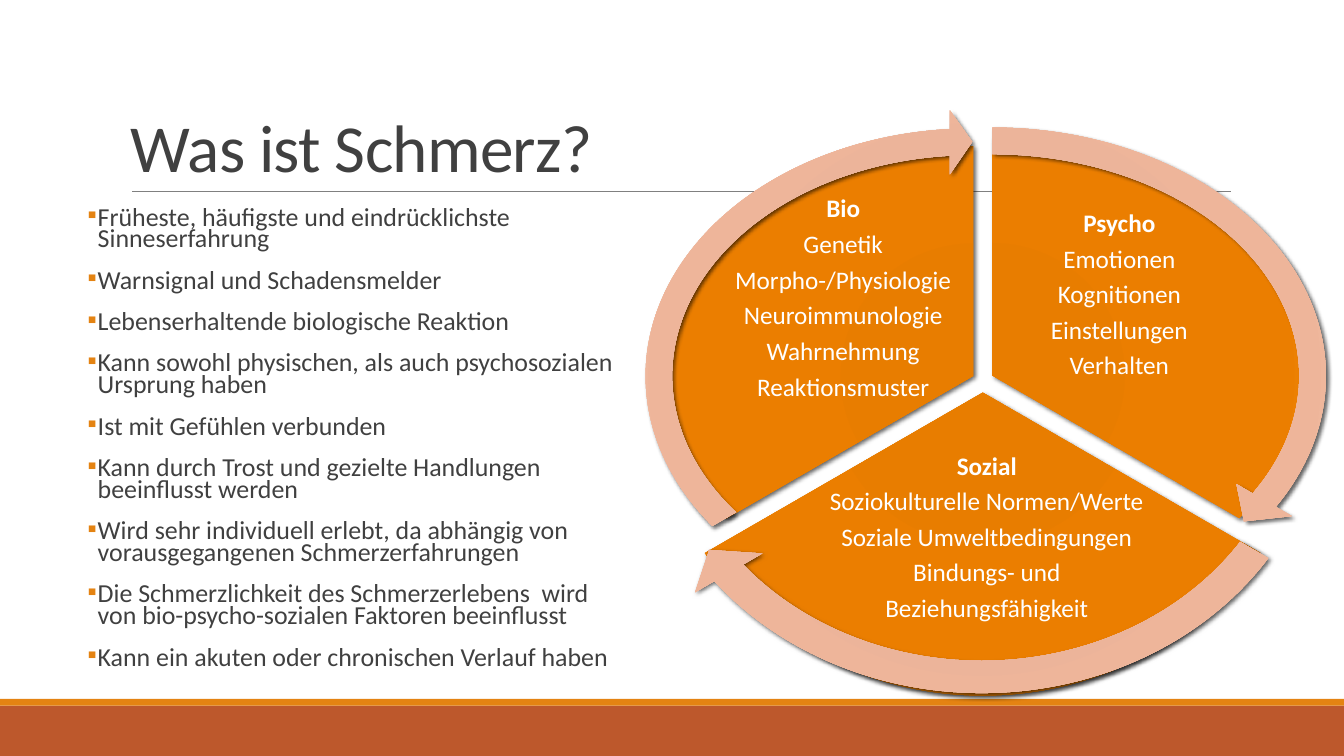
from lxml.etree import SubElement as Sub
from pptx import Presentation
from pptx.dml.color import RGBColor as Rgb
from pptx.enum.shapes import MSO_CONNECTOR as Link, MSO_SHAPE as Form
from pptx.enum.text import MSO_ANCHOR as Anchor, PP_ALIGN as Align
from pptx.oxml.ns import qn
from pptx.util import Inches, Pt

HUES = {"rust": "BD582C", "orange": "E48312", "rule": "808080",
        "ink": "404040", "white": "FFFFFF", "black": "000000"}
SHADES = {"pie": {0: "E57B00", 34: "E87D00", 70: "EB7E00", 100: "EF8407"},
          "arrow": {0: "E8B196", 34: "E9B399", 70: "EEB59A", 100: "F3C0A8"}}

# The slide is a grid of 40 columns by 22.5 rows of square cells
COLS, ROWS = 40, 22.5
CELL = Inches(13.333) / COLS

POINTS = [
    "Früheste, häufigste und eindrücklichste Sinneserfahrung",
    "Warnsignal und Schadensmelder",
    "Lebenserhaltende biologische Reaktion",
    "Kann sowohl physischen, als auch psychosozialen Ursprung haben",
    "Ist mit Gefühlen verbunden",
    "Kann durch Trost und gezielte Handlungen beeinflusst werden",
    "Wird sehr individuell erlebt, da abhängig von vorausgegangenen "
    "Schmerzerfahrungen",
    "Die Schmerzlichkeit des Schmerzerlebens  wird von bio-psycho-sozialen "
    "Faktoren beeinflusst",
    "Kann ein akuten oder chronischen Verlauf haben",
]

# Each sector: pie box and angles, label box and lines, arrow box and angles
SECTORS = [
    {"pie": (2.01, 2.04, 18.39, 14.13), "turn": (162, 18),
     "label": (11.7, 4.2, 6.57, 5),
     "lines": ["Psycho", "Emotionen", "Kognitionen", "Einstellungen",
               "Verhalten"],
     "arrow": (0.72, 1.17, 20.97, 15.9), "sweep": (14.73, 161.99)},
    {"pie": (1.17, 0.6, 19.5, 18.03), "turn": (18, 90),
     "label": (5.82, 11.42, 10.44, 5),
     "lines": ["Sozial", "Soziokulturelle Normen/Werte",
               "Soziale Umweltbedingungen", "Bindungs- und",
               "Beziehungsfähigkeit"],
     "arrow": (0, 0, 21.78, 19.23), "sweep": (86.72, 18.01)},
    {"pie": (1.26, 2.28, 18.75, 13.68), "turn": (90, 162),
     "label": (3.42, 3.77, 6.69, 6),
     "lines": ["Bio", "Genetik", "Morpho-/Physiologie", "Neuroimmunologie",
               "Wahrnehmung", "Reaktionsmuster"],
     "arrow": (0.33, 1.2, 20.55, 15.84), "sweep": (158.73, 90)},
]


def emu(box):
    return [round(side * CELL) for side in box]


def inner(box, part):
    """Place a part, given in cells, inside a box."""
    return (box[0] + part[0], box[1] + part[1], part[2], part[3])


def style(thing, values):
    for name, value in values.items():
        setattr(thing, name, value)


def shape(slide, form, box, turns=()):
    item = slide.shapes.add_shape(form, *emu(box))
    item.shadow.inherit = False
    item.line.fill.background()
    for i, turn in enumerate(turns):
        item.adjustments[i] = turn
    return item


def write(slide, box, lines, frame, para, font, hue):
    """Add a text box with one paragraph for each line."""
    text = slide.shapes.add_textbox(*emu(box)).text_frame
    style(text, {"word_wrap": True, **frame})
    for i, line in enumerate(lines):
        par = text.paragraphs[0] if i == 0 else text.add_paragraph()
        style(par, para)
        run = par.add_run()
        run.text = line
        style(run.font, {"name": "Calibri", **font})
        run.font.color.rgb = Rgb.from_string(HUES[hue])
    return text.paragraphs


def tint(parent, hue):
    return Sub(parent, qn("a:srgbClr"), val=hue)


def glow(item, shades):
    """Give a shape a round gradient and a soft shadow."""
    item.fill.background()
    props = item._element.spPr
    blank = props.find(qn("a:noFill"))
    grad = blank.makeelement(qn("a:gradFill"), {"rotWithShape": "1"})
    stops = Sub(grad, qn("a:gsLst"))
    for spot, hue in shades.items():
        tint(Sub(stops, qn("a:gs"), pos=str(spot * 1000)), hue)
    ring = Sub(grad, qn("a:path"), path="circle")
    Sub(ring, qn("a:fillToRect"), {side: "100000" for side in "ltrb"})
    props.replace(blank, grad)
    cast = Sub(props.find(qn("a:effectLst")), qn("a:outerShdw"),
               blurRad=str(Pt(3)), dist=str(Pt(2)), dir=str(45 * 60000),
               algn="ctr", rotWithShape="0")
    Sub(tint(cast, HUES["black"]), qn("a:alpha"), val="60000")


def footer(slide, box):
    """Draw the wide band and the thin strip on top of it."""
    left, top, width, height = box
    strip = 0.2
    for hue, start, size in (("rust", strip, height - strip),
                             ("orange", 0, strip)):
        bar = shape(slide, Form.RECTANGLE, (left, top + start, width, size))
        bar.fill.solid()
        bar.fill.fore_color.rgb = Rgb.from_string(HUES[hue])


def header(slide, box):
    """Draw the rule below the title, then the title."""
    left, top, width, height = box
    low = top + height
    start, y, end, _ = emu((left + 0.33, low, left + width + 0.03, 0))
    rule = slide.shapes.add_connector(Link.STRAIGHT, start, y, end, y)
    rule.line.width = Pt(0.5)
    rule.line.color.rgb = Rgb.from_string(HUES["rule"])
    Sub(rule._element.spPr, qn("a:effectLst"))
    pars = write(slide, box, ["Was ist Schmerz?"],
                 {"vertical_anchor": Anchor.BOTTOM}, {"line_spacing": 0.85},
                 {"size": Pt(48)}, "ink")
    pars[0].runs[0].font._element.set("spc", "-50")


def bullets(slide, box):
    """Write the list with small square marks."""
    pars = write(slide, box, POINTS, {"margin_left": 0, "margin_right": 0},
                 {"line_spacing": 0.7, "space_before": Pt(12),
                  "space_after": Pt(2)}, {"size": Pt(18.5)}, "ink")
    dent = Inches(0.1)
    for par in pars:
        props = par._p.get_or_add_pPr()
        props.set("marL", str(dent))
        props.set("indent", str(-dent))
        tint(Sub(props, qn("a:buClr")), HUES["orange"])
        Sub(props, qn("a:buFont"), typeface="Calibri")
        Sub(props, qn("a:buChar"), char="▪")


def wheel(slide, box):
    """Draw three labelled sectors, then the arrows around them."""
    bare = {f"margin_{side}": 0 for side in ("left", "top", "right", "bottom")}
    for part in SECTORS:
        pie = shape(slide, Form.PIE, inner(box, part["pie"]), part["turn"])
        glow(pie, SHADES["pie"])
        pars = write(slide, inner(box, part["label"]), part["lines"], bare,
                     {"alignment": Align.CENTER, "line_spacing": 0.9,
                      "space_after": Pt(6)}, {"size": Pt(18)}, "white")
        pars[0].runs[0].font.bold = True
    for part in SECTORS:
        turns = (0.05, 3.28, *part["sweep"], 0.06)
        arrow = shape(slide, Form.CIRCULAR_ARROW, inner(box, part["arrow"]),
                      turns)
        glow(arrow, SHADES["arrow"])


def main():
    deck = Presentation()
    style(deck, {"slide_width": round(COLS * CELL),
                 "slide_height": round(ROWS * CELL)})
    slide = deck.slides.add_slide(deck.slide_layouts[6])
    footer(slide, (0, 20.8, COLS, 1.7))
    header(slide, (3.6, 0.93, 33, 4.77))
    bullets(slide, (2.61, 6.06, 16.2, 14.82))
    wheel(slide, (18.33, 2.07, 21.78, 19.23))
    deck.save("out.pptx")


if __name__ == "__main__":
    main()
